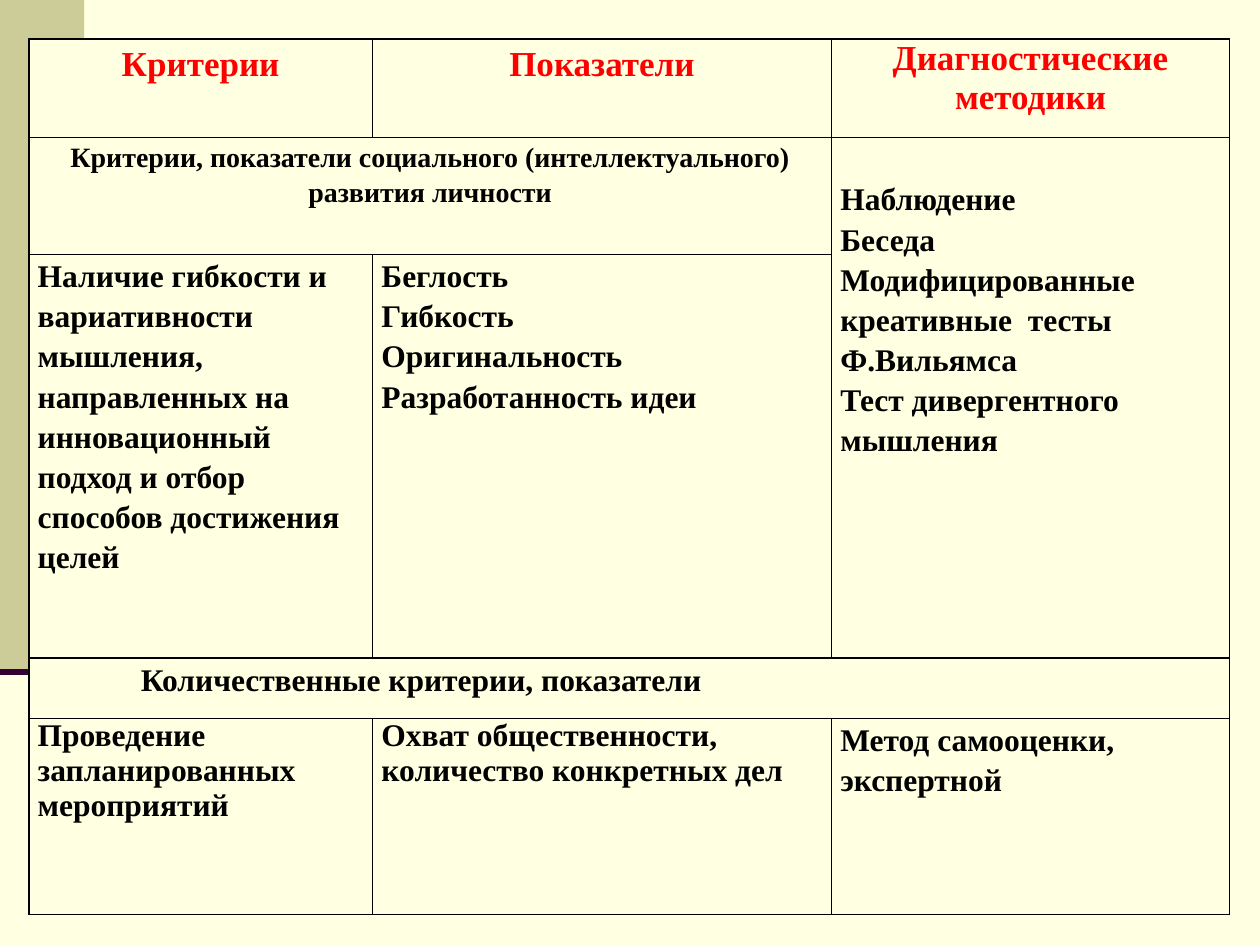
from lxml.etree import SubElement
from pptx import Presentation
from pptx.dml.color import RGBColor
from pptx.enum.shapes import MSO_CONNECTOR as Connector, MSO_SHAPE as Shape
from pptx.enum.text import PP_ALIGN as Align
from pptx.oxml.ns import qn
from pptx.util import Cm, Pt

COLORS = {"cream": "FFFFE1", "olive": "CCCC99", "plum": "330033",
          "red": "FF0000", "black": "000000"}


def rgb(name):
    return RGBColor.from_string(COLORS[name])


class CriteriaSlide:
    font_name = "Times New Roman"
    border_width = Pt(1)

    def __init__(self, presentation):
        self.slide = presentation.slides.add_slide(presentation.slide_layouts[6])
        background = self.slide.background.fill
        background.solid()
        background.fore_color.rgb = rgb("cream")

    def band(self, left, top, width, height, color):
        band = self.slide.shapes.add_shape(
            Shape.RECTANGLE, Cm(left), Cm(top), Cm(width), Cm(height))
        band.shadow.inherit = False
        band.fill.solid()
        band.fill.fore_color.rgb = rgb(color)
        band.line.fill.background()

    def rule(self, x1, y1, x2, y2, color, width):
        rule = self.slide.shapes.add_connector(
            Connector.STRAIGHT, Cm(x1), Cm(y1), Cm(x2), Cm(y2))
        rule.line.color.rgb = rgb(color)
        rule.line.width = Pt(width)
        SubElement(rule._element.spPr, qn("a:effectLst"))

    def table(self, left, top, widths, heights):
        frame = self.slide.shapes.add_table(
            len(heights), len(widths), Cm(left), Cm(top),
            Cm(sum(widths)), Cm(sum(heights)))
        table = frame.table
        table.first_row = table.horz_banding = False
        for column, width in zip(table.columns, widths):
            column.width = Cm(width)
        for row, height in zip(table.rows, heights):
            row.height = Cm(height)
        for cell in table.iter_cells():
            self.frame_cell(cell)
        return table

    def frame_cell(self, cell):
        properties = cell._tc.get_or_add_tcPr()
        for side in ("lnL", "lnR", "lnT", "lnB"):
            border = SubElement(properties, qn(f"a:{side}"), w=str(self.border_width))
            fill = SubElement(border, qn("a:solidFill"))
            SubElement(fill, qn("a:srgbClr"), val=COLORS["black"])
        cell.fill.solid()
        cell.fill.fore_color.rgb = rgb("cream")

    def cell_text(self, cell, lines, size=18, color="black", align=Align.LEFT,
                  spacing=1.15, indent=0, top=0):
        margins = {"margin_left": Cm(0.18 + indent), "margin_right": Cm(0.18),
                   "margin_top": Cm(top), "margin_bottom": 0}
        for name, value in margins.items():
            setattr(cell, name, value)
        font_format = {"name": self.font_name, "size": Pt(size), "bold": True}
        for index, line in enumerate(lines):
            frame = cell.text_frame
            paragraph = frame.add_paragraph() if index else frame.paragraphs[0]
            paragraph.text = line
            paragraph.alignment = align
            paragraph.line_spacing = spacing
            for run in paragraph.runs:
                for name, value in font_format.items():
                    setattr(run.font, name, value)
                run.font.color.rgb = rgb(color)


def main():
    presentation = Presentation()
    presentation.slide_width, presentation.slide_height = Cm(25.4), Cm(19.05)
    page = CriteriaSlide(presentation)

    # Side decoration
    page.band(0, 0, 1.7, 13.54, "olive")
    page.rule(0, 13.54, 1.7, 13.54, "plum", 3.5)

    # Table grid
    criteria = page.table(0.58, 0.79, widths=[6.93, 9.25, 8.03],
                          heights=[1.98, 2.36, 8.13, 1.22, 3.96])
    for first, last in (((1, 0), (1, 1)), ((1, 2), (2, 2)), ((3, 0), (3, 2))):
        criteria.cell(*first).merge(criteria.cell(*last))

    # Table text: row, column, paragraphs, format
    heading = {"size": 20, "color": "red", "align": Align.CENTER}
    justified = {"align": Align.JUSTIFY}
    single = {"spacing": 1}
    contents = [
        (0, 0, ["Критерии"], heading),
        (0, 1, ["Показатели"], heading),
        (0, 2, ["Диагностические методики"], heading | single),
        (1, 0, ["Критерии, показатели социального (интеллектуального) "
                "развития личности"], {"size": 16, "align": Align.CENTER}),
        (1, 2, ["Наблюдение", "Беседа",
                "Модифицированные креативные  тесты Ф.Вильямса",
                "Тест дивергентного мышления"], {"top": 0.81}),
        (2, 0, ["Наличие гибкости и вариативности мышления, направленных на "
                "инновационный подход и отбор способов достижения целей"], {}),
        (2, 1, ["Беглость", "Гибкость", "Оригинальность",
                "Разработанность идеи"], justified),
        (3, 0, ["Количественные критерии, показатели"],
         justified | {"indent": 2.08}),
        (4, 0, ["Проведение запланированных мероприятий"], single),
        (4, 1, ["Охват общественности,\vколичество конкретных дел"], single),
        (4, 2, ["Метод самооценки, экспертной"], {}),
    ]
    for row, column, lines, text_format in contents:
        page.cell_text(criteria.cell(row, column), lines, **text_format)

    presentation.save("out.pptx")


if __name__ == "__main__":
    main()
